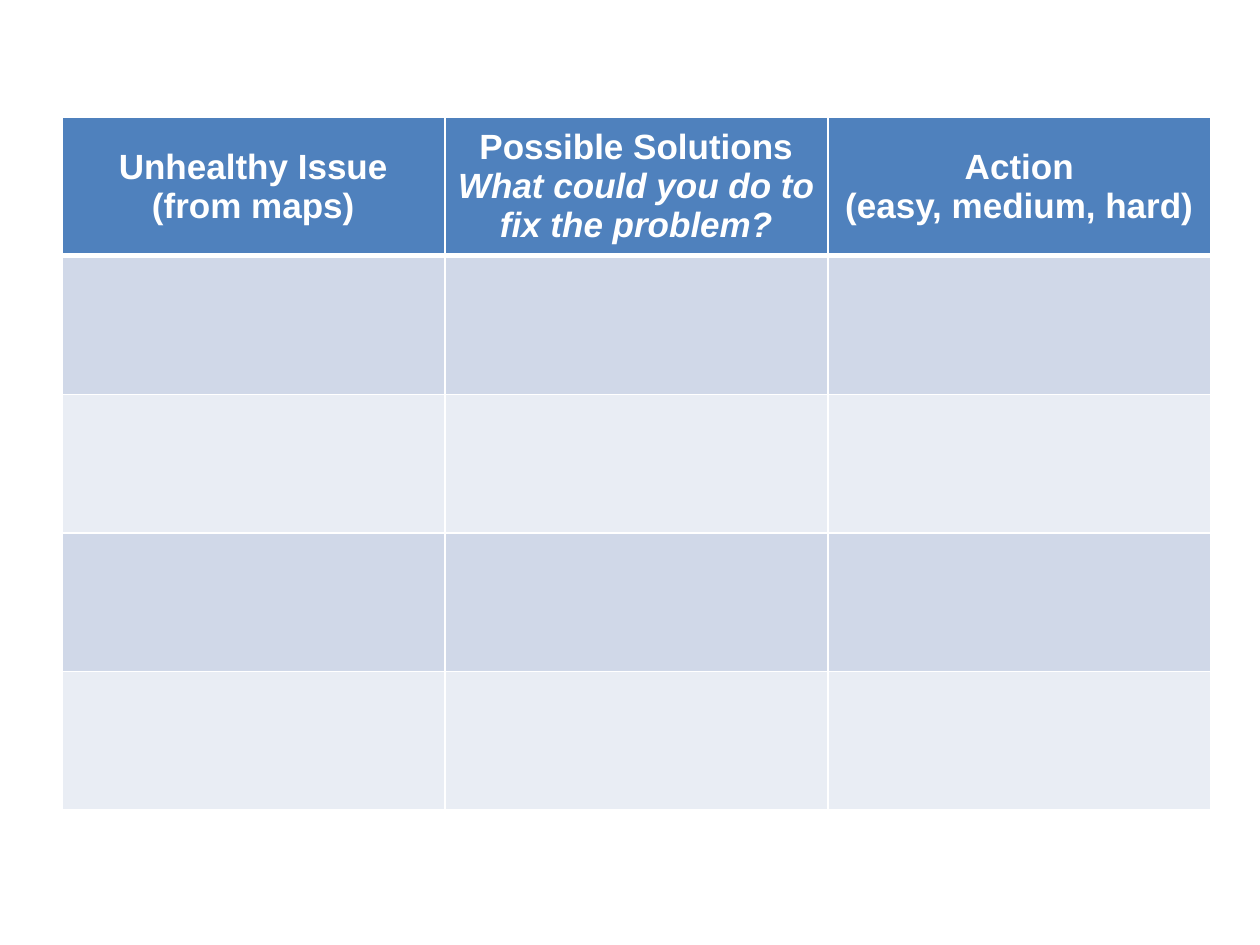
import lxml.etree
import pptx
import pptx.dml.color
import pptx.enum.text
import pptx.oxml.ns
import pptx.util
from pptx.util import Inches

COLORS = {
    "header": "4F81BD",
    "dark band": "D0D8E8",
    "light band": "E9EDF4",
    "white": "FFFFFF",
}
# Each heading holds paragraphs of (lines, italic)
HEADINGS = [
    [(["Unhealthy Issue", "(from maps)"], False)],
    [(["Possible Solutions"], False),
     (["What could you do to fix the problem?"], True)],
    [(["Action", "(easy, medium, hard)"], False)],
]
ANSWER_ROWS = 4
COLUMN_WIDTH = Inches(3.04)
ROW_HEIGHT = Inches(1.1)


def rgb(name):
    return pptx.dml.color.RGBColor.from_string(COLORS[name])


def add_border(cell, side, width):
    """Draw a white line, width in points, on side L, R, T or B."""
    qn = pptx.oxml.ns.qn
    line = lxml.etree.SubElement(cell._tc.get_or_add_tcPr(), qn(f"a:ln{side}"),
                                 w=str(pptx.util.Pt(width)))
    fill = lxml.etree.SubElement(line, qn("a:solidFill"))
    lxml.etree.SubElement(fill, qn("a:srgbClr"), val=COLORS["white"])


def style_cell(cell, row):
    widths = {"L": 1, "R": 1, "T": 3 if row == 1 else 1, "B": 3 if row == 0 else 1}
    for side, width in widths.items():
        add_border(cell, side, width)
    cell.fill.solid()
    band = "dark band" if row % 2 else "light band"
    cell.fill.fore_color.rgb = rgb("header" if row == 0 else band)


def add_heading(cell, heading):
    cell.vertical_anchor = pptx.enum.text.MSO_ANCHOR.MIDDLE
    frame = cell.text_frame
    for index, (lines, italic) in enumerate(heading):
        paragraph = frame.add_paragraph() if index else frame.paragraphs[0]
        paragraph.alignment = pptx.enum.text.PP_ALIGN.CENTER
        for number, line in enumerate(lines):
            if number:
                paragraph.add_line_break()
            run = paragraph.add_run()
            run.text = line
            run.font.name = "Arial"
            run.font.size = pptx.util.Pt(20)
            run.font.bold = True
            run.font.italic = italic
            run.font.color.rgb = rgb("white")


def add_issue_table(slide):
    rows, columns = ANSWER_ROWS + 1, len(HEADINGS)
    table = slide.shapes.add_table(
        rows, columns, Inches(0.49), Inches(0.93),
        COLUMN_WIDTH * columns, ROW_HEIGHT * rows).table
    for column in table.columns:
        column.width = COLUMN_WIDTH
    for index, row in enumerate(table.rows):
        row.height = ROW_HEIGHT
        for cell in row.cells:
            style_cell(cell, index)
    for cell, heading in zip(table.rows[0].cells, HEADINGS):
        add_heading(cell, heading)


def main():
    presentation = pptx.Presentation()
    presentation.slide_width = Inches(10)
    presentation.slide_height = Inches(7.5)
    slide = presentation.slides.add_slide(presentation.slide_layouts[6])
    add_issue_table(slide)
    presentation.save("out.pptx")


if __name__ == "__main__":
    main()
